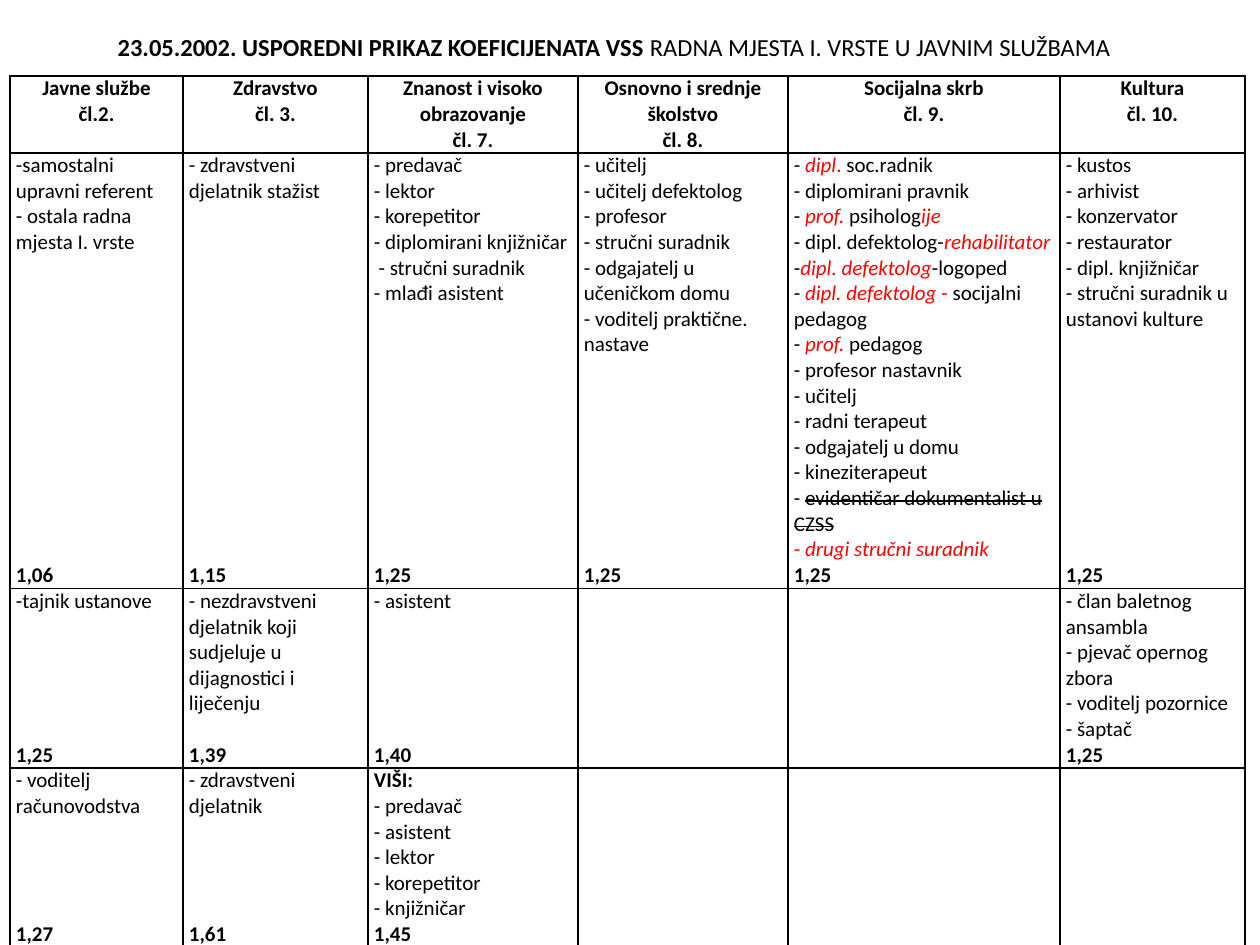
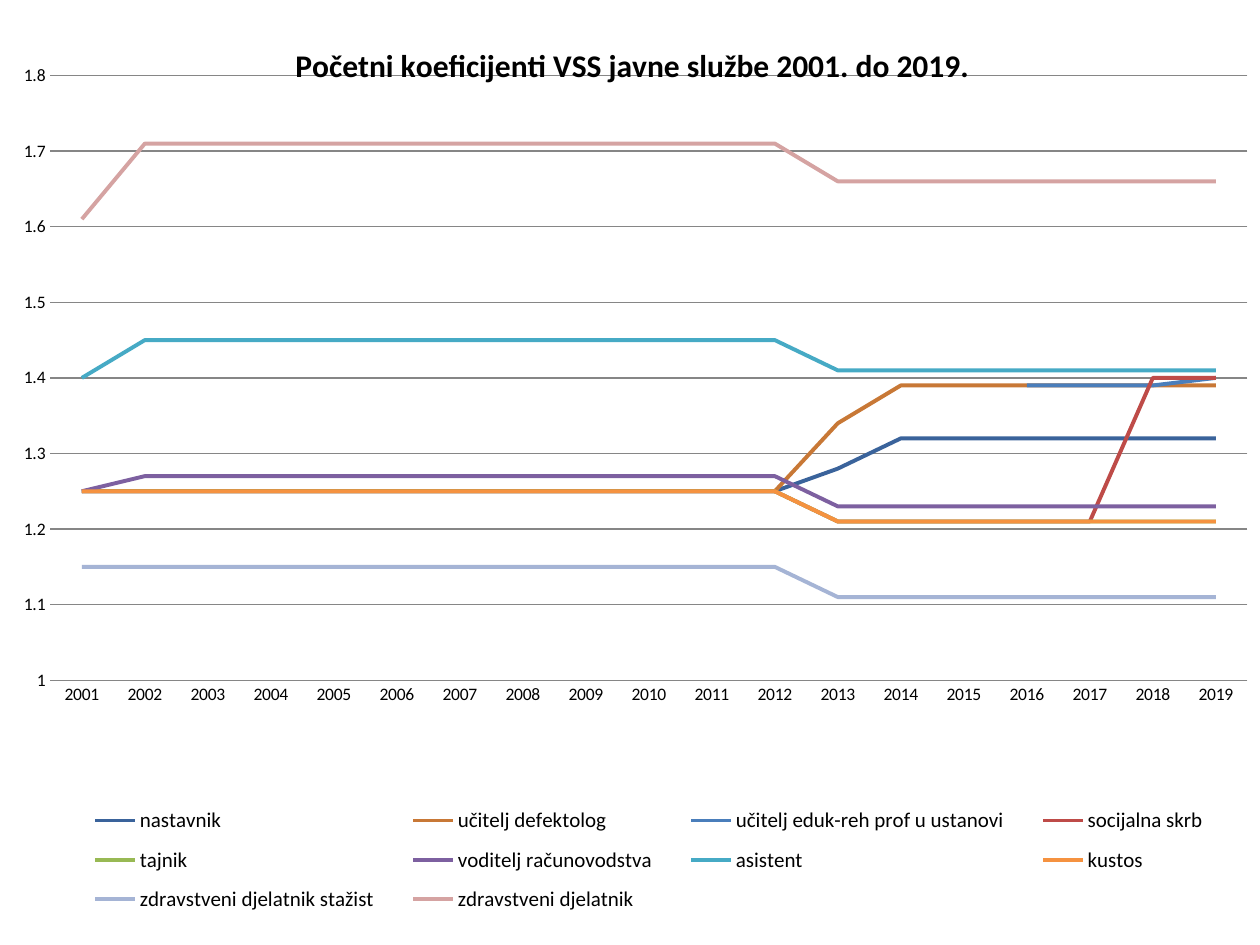
import pptx
import pptx.chart.data
import pptx.dml.color
import pptx.enum.chart
import pptx.enum.dml
import pptx.enum.text
import pptx.oxml
import pptx.oxml.ns
import pptx.util
from dataclasses import dataclass

Align = pptx.enum.text.PP_ALIGN


@dataclass(frozen=True)
class Theme:
    font: str = "Calibri"
    black: str = "000000"
    red: str = "FF0000"
    grid: str = "868686"
    title_size: int = 14
    body_size: int = 12
    axis_size: int = 10
    chart_title_size: int = 18
    line_height: float = 14.65
    border: float = 1
    series_width: float = 2.25


THEME = Theme()
PIXELS_PER_INCH = 126
TITLE_ONLY, BLANK = 5, 6

STYLES = {
    "plain": {},
    "bold": {"bold": True},
    "red": {"color": THEME.red, "italic": True},
    "red upright": {"color": THEME.red},
    "struck": {"strike": True},
}

COLUMN_WIDTHS = [173, 185, 210, 210, 272, 185]
ROW_HEIGHTS = [76, 427, 175, 175]

HEADERS = [
    ["Javne službe", "čl.2."],
    ["Zdravstvo", "čl. 3."],
    ["Znanost i visoko obrazovanje", "čl. 7."],
    ["Osnovno i srednje školstvo", "čl. 8."],
    ["Socijalna skrb", "čl. 9."],
    ["Kultura", "čl. 10."],
]

SOCIAL_CARE = [
    ["- ", ("dipl", "red"), (".", "red upright"), " soc.radnik"],
    "- diplomirani pravnik",
    ["- ", ("prof.", "red"), " psiholog", ("ije", "red")],
    ["- dipl. defektolog-", ("rehabilitator", "red")],
    ["-", ("dipl. defektolog", "red"), "-logoped"],
    ["- ", ("dipl. defektolog", "red"), (" - ", "red upright"), "socijalni pedagog"],
    ["- ", ("prof.", "red"), " pedagog"],
    "- profesor nastavnik",
    "- učitelj",
    "- radni terapeut",
    "- odgajatelj u domu",
    "- kineziterapeut",
    ["- ", ("evidentičar dokumentalist u CZSS", "struck")],
    [("- ", "red upright"), ("drugi stručni suradnik", "red")],
]

# Each cell: job titles, free lines above the coefficient, coefficient
JOB_ROWS = [
    [
        (["-samostalni upravni referent", "- ostala radna mjesta I. vrste"], 12, "1,06"),
        (["- zdravstveni djelatnik stažist"], 14, "1,15"),
        (["- predavač", "- lektor", "- korepetitor", "- diplomirani knjižničar",
          " - stručni suradnik", "- mlađi asistent"], 10, "1,25"),
        (["- učitelj", "- učitelj defektolog", "- profesor", "- stručni suradnik",
          "- odgajatelj u učeničkom domu", "- voditelj praktične. nastave"], 8, "1,25"),
        (SOCIAL_CARE, 0, "1,25"),
        (["- kustos", "- arhivist", "- konzervator", "- restaurator",
          "- dipl. knjižničar", "- stručni suradnik u ustanovi kulture"], 9, "1,25"),
    ],
    [
        (["-tajnik ustanove"], 5, "1,25"),
        (["- nezdravstveni djelatnik koji sudjeluje u dijagnostici i liječenju"], 1, "1,39"),
        (["- asistent"], 5, "1,40"),
        None,
        None,
        (["- član baletnog ansambla", "- pjevač opernog zbora",
          "- voditelj pozornice", "- šaptač"], 0, "1,25"),
    ],
    [
        (["- voditelj računovodstva"], 4, "1,27"),
        (["- zdravstveni djelatnik"], 4, "1,61"),
        ([[("VIŠI:", "bold")], "- predavač", "- asistent", "- lektor",
          "- korepetitor", "- knjižničar"], 0, "1,45"),
        None,
        None,
        None,
    ],
]

# Each series: name, line colour, (value, number of years) steps from 2001
YEARS = range(2001, 2020)
COEFFICIENTS = [
    ("nastavnik", "3A639B", [(1.25, 12), (1.28, 1), (1.32, 6)]),
    ("učitelj defektolog", "C87836", [(1.25, 12), (1.34, 1), (1.39, 6)]),
    ("učitelj eduk-reh prof u ustanovi", "4A7EBB", [(None, 15), (1.39, 3), (1.4, 1)]),
    ("socijalna skrb", "BE4B48", [(1.25, 12), (1.21, 5), (1.4, 2)]),
    ("tajnik", "98B954", [(1.25, 12), (1.21, 7)]),
    ("voditelj računovodstva", "7D60A0", [(1.25, 1), (1.27, 11), (1.23, 7)]),
    ("asistent", "46AAC5", [(1.4, 1), (1.45, 11), (1.41, 7)]),
    ("kustos", "F59240", [(1.25, 12), (1.21, 7)]),
    ("zdravstveni djelatnik stažist", "A5B4D5", [(1.15, 12), (1.11, 7)]),
    ("zdravstveni djelatnik", "D5A3A2", [(1.61, 1), (1.71, 11), (1.66, 7)]),
]


def px(length):
    return round(length * pptx.util.Inches(1) / PIXELS_PER_INCH)


def rgb(value):
    return pptx.dml.color.RGBColor.from_string(value)


def format_font(font, size, color=THEME.black, bold=False, italic=False):
    values = {"name": THEME.font, "size": pptx.util.Pt(size), "bold": bold, "italic": italic}
    for name, value in values.items():
        setattr(font, name, value)
    font.color.rgb = rgb(color)


def add_run(paragraph, text, size, strike=False, **style):
    run = paragraph.add_run()
    run.text = text
    format_font(run.font, size, **style)
    if strike:
        run._r.get_or_add_rPr().set("strike", "sngStrike")


def fill_lines(text_frame, lines, style="plain", align=Align.LEFT):
    """Write one paragraph a line; a line is a string or a list of pieces."""
    for index, line in enumerate(lines):
        paragraph = text_frame.paragraphs[0] if index == 0 else text_frame.add_paragraph()
        paragraph.alignment = align
        for piece in [line] if isinstance(line, str) else line:
            text, piece_style = (piece, style) if isinstance(piece, str) else piece
            add_run(paragraph, text, THEME.body_size, **STYLES[piece_style])


def format_cell(cell):
    margins = {"margin_left": px(6), "margin_right": px(6), "margin_top": 0, "margin_bottom": 0}
    for name, value in margins.items():
        setattr(cell, name, value)
    cell.fill.background()
    properties = cell._tc.get_or_add_tcPr()
    for index, side in enumerate("LRTB"):
        properties.insert(index, pptx.oxml.parse_xml(
            f'<a:ln{side} {pptx.oxml.ns.nsdecls("a")} w="{pptx.util.Pt(THEME.border)}">'
            f'<a:solidFill><a:srgbClr val="{THEME.black}"/></a:solidFill></a:ln{side}>'))


def add_title(slide, box, pieces):
    title = slide.shapes.title
    for name, value in zip(("left", "top", "width", "height"), box):
        setattr(title, name, px(value))
    frame = title.text_frame
    frame.word_wrap = True
    frame.auto_size = pptx.enum.text.MSO_AUTO_SIZE.NONE
    frame.vertical_anchor = pptx.enum.text.MSO_ANCHOR.TOP
    paragraph = frame.paragraphs[0]
    paragraph.alignment = Align.LEFT
    paragraph.line_spacing = 1.0
    paragraph.space_before = pptx.util.Pt(0)
    for text, style in pieces:
        add_run(paragraph, text, THEME.title_size, **STYLES[style])


def add_job_table(slide, left, top):
    table = slide.shapes.add_table(
        len(ROW_HEIGHTS), len(COLUMN_WIDTHS), px(left), px(top),
        px(sum(COLUMN_WIDTHS)), px(sum(ROW_HEIGHTS))).table
    table.first_row = table.horz_banding = False
    for column, width in zip(table.columns, COLUMN_WIDTHS):
        column.width = px(width)
    for row, height in zip(table.rows, ROW_HEIGHTS):
        row.height = px(height)
    for cell in table.iter_cells():
        format_cell(cell)
    for column, header in enumerate(HEADERS):
        fill_lines(table.cell(0, column).text_frame, header, "bold", Align.CENTER)
    for row, jobs in enumerate(JOB_ROWS, start=1):
        for column, job in enumerate(jobs):
            if job:
                titles, free_lines, coefficient = job
                frame = table.cell(row, column).text_frame
                fill_lines(frame, titles + [[(coefficient, "bold")]])
                frame.paragraphs[-1].space_before = pptx.util.Pt(free_lines * THEME.line_height)


def set_layout(element, box, successors, inner=False):
    """Fix the place of a chart part as fractions of the chart."""
    for previous in element.findall(pptx.oxml.ns.qn("c:layout")):
        element.remove(previous)
    target = '<c:layoutTarget val="inner"/>' if inner else ""
    modes = "".join(f'<c:{axis}Mode val="edge"/>' for axis in "xy")
    values = "".join(f'<c:{name} val="{value}"/>' for name, value in zip("xywh", box))
    layout = pptx.oxml.parse_xml(
        f'<c:layout {pptx.oxml.ns.nsdecls("c")}><c:manualLayout>{target}{modes}{values}'
        '</c:manualLayout></c:layout>')
    element.insert_element_before(layout, *successors)


def format_axes(chart):
    none = pptx.enum.chart.XL_TICK_MARK.NONE
    for axis in (chart.category_axis, chart.value_axis):
        axis.major_tick_mark = axis.minor_tick_mark = none
        format_font(axis.tick_labels.font, THEME.axis_size)
    value_axis = chart.value_axis
    scale = {"minimum_scale": 1, "maximum_scale": 1.8, "major_unit": 0.1}
    for name, value in scale.items():
        setattr(value_axis, name, value)
    value_axis.tick_labels.number_format = "General"
    value_axis.tick_labels.number_format_is_linked = False
    value_axis.format.line.fill.background()
    for line in (value_axis.major_gridlines.format.line, chart.category_axis.format.line):
        line.color.rgb = rgb(THEME.grid)
        line.width = pptx.util.Pt(0.75)


def add_coefficient_chart(slide, box):
    data = pptx.chart.data.CategoryChartData()
    data.categories = [str(year) for year in YEARS]
    for name, _, steps in COEFFICIENTS:
        data.add_series(name, [value for value, years in steps for _ in range(years)])
    chart = slide.shapes.add_chart(
        pptx.enum.chart.XL_CHART_TYPE.LINE, *map(px, box), data).chart
    format_font(chart.font, THEME.axis_size)
    chart.plots[0].vary_by_categories = False
    for series, (_, color, _) in zip(chart.plots[0].series, COEFFICIENTS):
        series.smooth = False
        series.marker.style = pptx.enum.chart.XL_MARKER_STYLE.NONE
        series.format.line.color.rgb = rgb(color)
        series.format.line.width = pptx.util.Pt(THEME.series_width)
    format_axes(chart)

    chart.has_title = True
    add_run(chart.chart_title.text_frame.paragraphs[0],
            "Početni koeficijenti VSS javne službe 2001. do 2019.",
            THEME.chart_title_size, bold=True)
    set_layout(chart.chart_title._element, (0.23, 0.04), ("c:overlay", "c:spPr", "c:txPr"))

    chart.has_legend = True
    chart.legend.position = pptx.enum.chart.XL_LEGEND_POSITION.BOTTOM
    chart.legend.include_in_layout = False
    format_font(chart.legend.font, THEME.body_size)
    set_layout(chart.legend._element, (0.05, 0.84, 0.93, 0.14), ("c:overlay", "c:spPr", "c:txPr"))
    plot_area = chart._chartSpace.chart.plotArea
    set_layout(plot_area, (0.04, 0.08, 0.95, 0.64), ("c:lineChart",), inner=True)


def build_comparison_slide(presentation):
    slide = presentation.slides.add_slide(presentation.slide_layouts[TITLE_ONLY])
    add_title(slide, (105, 26, 1081, 43), [
        ("23.05.2002. USPOREDNI PRIKAZ KOEFICIJENATA VSS ", "bold"),
        ("RADNA MJESTA I. VRSTE U JAVNIM SLUŽBAMA", "plain"),
    ])
    add_job_table(slide, 10, 76)


def build_chart_slide(presentation):
    slide = presentation.slides.add_slide(presentation.slide_layouts[BLANK])
    add_coefficient_chart(slide, (0, 0, 1260, 945))


def main():
    presentation = pptx.Presentation()
    presentation.slide_width = px(1260)
    presentation.slide_height = px(945)
    build_comparison_slide(presentation)
    build_chart_slide(presentation)
    presentation.save("out.pptx")


if __name__ == "__main__":
    main()
